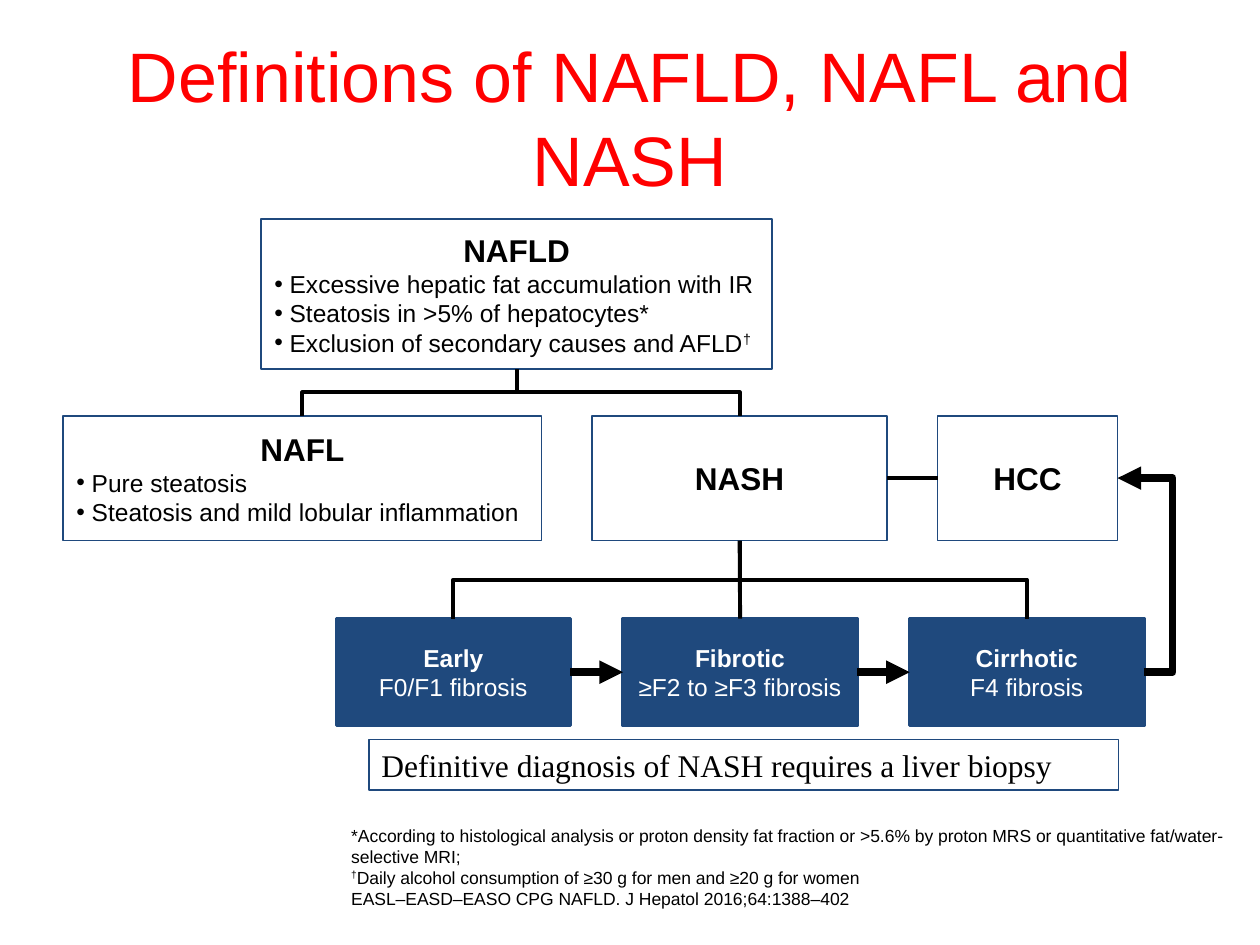
from lxml.etree import SubElement
from pptx import Presentation
from pptx.dml.color import RGBColor
from pptx.enum.shapes import MSO_CONNECTOR as CONN, MSO_SHAPE as SHAPE
from pptx.enum.text import MSO_ANCHOR as ANCHOR, MSO_AUTO_SIZE as AUTO, PP_ALIGN as ALIGN
from pptx.oxml.ns import qn
from pptx.util import Cm, Pt

NAVY, BLACK, WHITE, RED = "1F497D", "000000", "FFFFFF", "FF0000"
GAP = 1.02


def color(value):
    return RGBColor.from_string(value)


def add_run(p, text, size, fill=BLACK, bold=False, font="Arial", raised=False):
    r = p.add_run()
    r.text = text
    r.font.name, r.font.size, r.font.bold = font, Pt(size), bold
    r.font.color.rgb = color(fill)
    if raised:
        r.font._element.set("baseline", "30000")


def next_paragraph(tf):
    """Return the first paragraph while it is empty, else a new one."""
    return tf.add_paragraph() if tf.paragraphs[0].runs else tf.paragraphs[0]


def add_bullet(p):
    pPr = p._p.get_or_add_pPr()
    pPr.set("marL", str(Cm(0.33)))
    pPr.set("indent", str(-Cm(0.31)))
    SubElement(pPr, qn("a:buFont"), typeface="Arial")
    SubElement(pPr, qn("a:buChar"), char="•")


def add_box(slide, left, top, width, height, fill=WHITE, line_width=1):
    s = slide.shapes.add_shape(SHAPE.RECTANGLE, Cm(left), Cm(top), Cm(width), Cm(height))
    s.shadow.inherit = False
    s.fill.solid()
    s.fill.fore_color.rgb = color(fill)
    s.line.color.rgb = color(NAVY)
    s.line.width = Pt(line_width)
    s.text_frame.word_wrap = True
    s.text_frame.vertical_anchor = ANCHOR.MIDDLE
    return s


def add_term(slide, box, name, bullets=()):
    """White box with a bold centred name; each bullet is (text, raised mark)."""
    s = add_box(slide, *box)
    p = next_paragraph(s.text_frame)
    p.alignment = ALIGN.CENTER
    add_run(p, name, 18, bold=True)
    for text, mark in bullets:
        p = next_paragraph(s.text_frame)
        p.alignment = ALIGN.LEFT
        add_bullet(p)
        add_run(p, text, 14)
        if mark:
            add_run(p, mark, 14, raised=True)
    return s


def add_stages(slide, left, top, width, height, stages):
    pitch = width + 1.06
    boxes = []
    for i, lines in enumerate(stages):
        s = add_box(slide, left + i * pitch, top, width, height, NAVY, 2)
        for n, text in enumerate(lines):
            p = next_paragraph(s.text_frame)
            p.alignment = ALIGN.CENTER
            add_run(p, text, 14, WHITE, bold=n == 0)
        boxes.append(s)
    return boxes


def style_line(cn, width, arrow=False):
    cn.line.color.rgb = color(BLACK)
    cn.line.width = Pt(width)
    if arrow:
        SubElement(cn.line._get_or_add_ln(), qn("a:tailEnd"), type="triangle")
    SubElement(cn._element.spPr, qn("a:effectLst"))


def join(slide, a, b, sides, width=2.25, arrow=False):
    cn = slide.shapes.add_connector(CONN.STRAIGHT, 0, 0, 0, 0)
    cn.begin_connect(a, sides[0])
    cn.end_connect(b, sides[1])
    style_line(cn, width, arrow)


def add_branch(slide, parent, child):
    """Elbow from the bottom of parent to the top of child, turned to run downwards."""
    x1, y1 = parent.left + parent.width // 2, parent.top + parent.height
    x2, y2 = child.left + child.width // 2, child.top
    w, h = y2 - y1, abs(x2 - x1)
    left, top = (x1 + x2 - w) // 2, (y1 + y2 - h) // 2
    ends = (left, left + w) if x2 < x1 else (left + w, left)
    cn = slide.shapes.add_connector(CONN.ELBOW, ends[0], top, ends[1], top + h)
    degrees = 90 if x2 < x1 else 270
    cn._element.spPr.find(qn("a:xfrm")).set("rot", str(degrees * 60000))
    style_line(cn, 2.25)


def add_return_arrow(slide, a, b, reach):
    """Elbow arrow from the right of a, out by reach, back to the right of b."""
    x1, x2 = a.left + a.width, b.left + b.width
    cn = slide.shapes.add_connector(
        CONN.ELBOW, x1, a.top + a.height // 2, x2, b.top + b.height // 2)
    guides = cn._element.spPr.find(qn("a:prstGeom")).get_or_add_avLst()
    bend = round(-100000 * Cm(reach) / (x1 - x2))
    SubElement(guides, qn("a:gd"), name="adj1", fmla=f"val {bend}")
    style_line(cn, 4.5, arrow=True)


def add_title(slide, left, top, width, height, text):
    s = slide.shapes.title
    s.left, s.top, s.width, s.height = Cm(left), Cm(top), Cm(width), Cm(height)
    tf = s.text_frame
    tf.word_wrap = True
    tf.vertical_anchor = ANCHOR.MIDDLE
    p = tf.paragraphs[0]
    p.alignment = ALIGN.CENTER
    add_run(p, text, 40, RED)


def add_diagram(slide, left, top):
    nafld = add_term(slide, (left + 3.99, top, 10.31, 3.02), "NAFLD", [
        ("Excessive hepatic fat accumulation with IR", ""),
        ("Steatosis in >5% of hepatocytes*", ""),
        ("Exclusion of secondary causes and AFLD", "†")])
    row = {"NAFL": (9.65, [("Pure steatosis", ""),
                           ("Steatosis and mild lobular inflammation", "")]),
           "NASH": (5.94, []),
           "HCC": (3.63, [])}
    terms, x = [], left
    for name, (width, bullets) in row.items():
        terms.append(add_term(slide, (x, top + 3.96, width, 2.52), name, bullets))
        x += width + GAP
    nafl, nash, hcc = terms
    stages = add_stages(slide, left + 5.51, top + 8.05, 4.72, 2.16, [
        ("Early", "F0/F1 fibrosis"),
        ("Fibrotic", "≥F2 to ≥F3 fibrosis"),
        ("Cirrhotic", "F4 fibrosis")])
    early, fibrotic, cirrhotic = stages

    for parent, child in ((nafld, nafl), (nafld, nash), (nash, early), (nash, cirrhotic)):
        add_branch(slide, parent, child)
    join(slide, nash, fibrotic, (2, 0))
    join(slide, nash, hcc, (3, 1))
    for a, b in zip(stages, stages[1:]):
        join(slide, a, b, (3, 1), 4.5, arrow=True)
    add_return_arrow(slide, cirrhotic, hcc, 0.58)


def add_biopsy_note(slide, left, top, width, height):
    s = add_box(slide, left, top, width, height, line_width=0.75)
    s.fill.background()
    tf = s.text_frame
    tf.auto_size = AUTO.SHAPE_TO_FIT_TEXT
    tf.vertical_anchor = ANCHOR.TOP
    p = tf.paragraphs[0]
    p.alignment = ALIGN.LEFT
    add_run(p, "Definitive diagnosis of NASH requires a liver biopsy", 18,
            font="Times New Roman")


def add_footnotes(slide, left, top, width, height):
    tf = slide.shapes.add_textbox(Cm(left), Cm(top), Cm(width), Cm(height)).text_frame
    tf.word_wrap = True
    tf.vertical_anchor = ANCHOR.BOTTOM
    tf.margin_left = tf.margin_right = Cm(0.4)
    tf.margin_top = tf.margin_bottom = Cm(0.2)
    notes = [
        ("", "*According to histological analysis or proton density fat fraction or "
             ">5.6% by proton MRS or quantitative fat/water-selective MRI;"),
        ("†", "Daily alcohol consumption of ≥30 g for men and ≥20 g for women"),
        ("", "EASL–EASD–EASO CPG NAFLD. J Hepatol 2016;64:1388–402")]
    for mark, text in notes:
        p = next_paragraph(tf)
        if mark:
            add_run(p, mark, 10, raised=True)
        add_run(p, text, 10)


def main():
    prs = Presentation()
    prs.slide_width, prs.slide_height = Cm(25.4), Cm(19.05)
    slide = prs.slides.add_slide(prs.slide_layouts[5])
    add_title(slide, 1.27, 0.76, 22.86, 3.18, "Definitions of NAFLD, NAFL and NASH")
    add_diagram(slide, 1.27, 4.42)
    add_biopsy_note(slide, 7.44, 14.91, 15.11, 1.02)
    add_footnotes(slide, 6.68, 17.48, 18.64, 1.04)
    prs.save("out.pptx")


if __name__ == "__main__":
    main()
